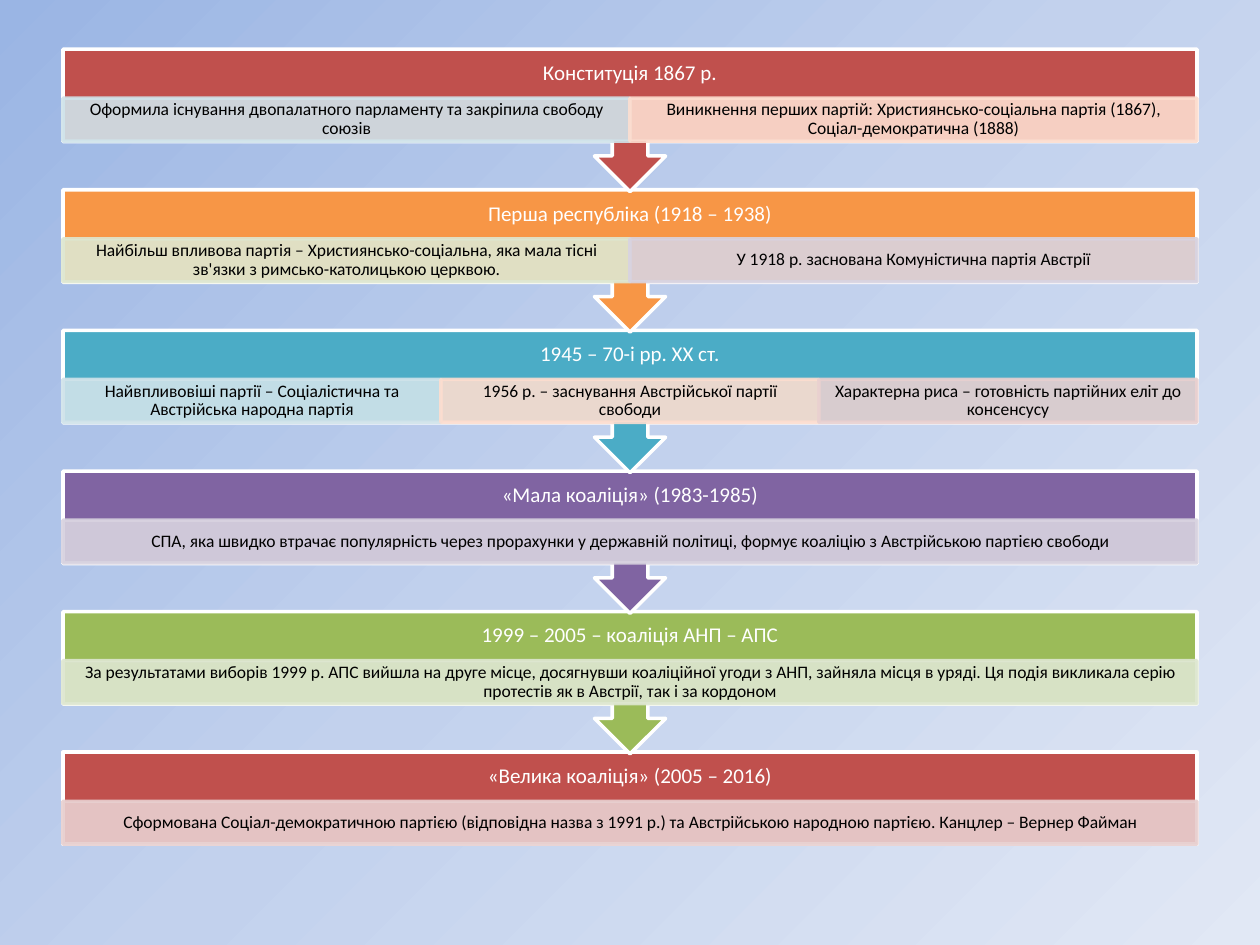
from copy import deepcopy

from pptx import Presentation
from pptx.dml.color import RGBColor
from pptx.enum.shapes import MSO_SHAPE
from pptx.enum.text import MSO_ANCHOR, PP_ALIGN
from pptx.oxml.ns import qn
from pptx.util import Inches, Pt

COLORS = {
    "white": "FFFFFF", "black": "000000",
    "red": "C0504D", "orange": "F79646", "teal": "4BACC6",
    "purple": "8064A2", "green": "9BBB59",
    "pale red": "E8D0D0", "pale orange": "FCDDCF", "pale teal": "D0E3EA",
    "pale purple": "D8D3E0", "pale green": "DEE7D1",
}
BACKGROUND = [(0, "9AB5E4"), (0.5, "C2D1ED"), (1, "E1E8F5")]

# Heading, colour, [(detail, colour), ...]
STAGES = [
    ("Конституція 1867 р.", "red", [
        ("Оформила існування двопалатного парламенту та закріпила свободу союзів", "pale teal"),
        ("Виникнення перших партій: Християнсько-соціальна партія (1867), "
         "Соціал-демократична (1888)", "pale orange"),
    ]),
    ("Перша республіка (1918 – 1938)", "orange", [
        ("Найбільш впливова партія – Християнсько-соціальна, яка мала тісні "
         "зв'язки з римсько-католицькою церквою.", "pale green"),
        ("У 1918 р. заснована Комуністична партія Австрії", "pale purple"),
    ]),
    ("1945 – 70-і рр. XX ст.", "teal", [
        ("Найвпливовіші партії – Соціалістична та Австрійська народна партія", "pale teal"),
        ("1956 р. – заснування Австрійської партії свободи", "pale orange"),
        ("Характерна риса – готовність партійних еліт до консенсусу", "pale red"),
    ]),
    ("«Мала коаліція» (1983-1985)", "purple", [
        ("СПА, яка швидко втрачає популярність через прорахунки у державній політиці, "
         "формує коаліцію з Австрійською партією свободи", "pale purple"),
    ]),
    ("1999 – 2005 – коаліція АНП – АПС", "green", [
        ("За результатами виборів 1999 р. АПС вийшла на друге місце, досягнувши коаліційної "
         "угоди з АНП, зайняла місця в уряді. Ця подія викликала серію протестів "
         "як в Австрії, так і за кордоном", "pale green"),
    ]),
    ("«Велика коаліція» (2005 – 2016)", "red", [
        ("Сформована Соціал-демократичною партією (відповідна назва з 1991 р.) та "
         "Австрійською народною партією. Канцлер – Вернер Файман", "pale red"),
    ]),
]

LEFT, WIDTH = 0.5, 9
TOP, LAST_TOP = 0.39, 5.97
PITCH = (LAST_TOP - TOP) / (len(STAGES) - 1)
CALLOUT_H, LAST_H = 1.13, 0.73
HEADING_H, DETAIL_H = 0.39, 0.34


def add_block(kind, left, top, width, height, fill, line):
    sp = s.shapes.add_shape(kind, Inches(left), Inches(top), Inches(width), Inches(height))
    sp.shadow.inherit = False
    sp.fill.solid()
    sp.fill.fore_color.rgb = RGBColor.from_string(COLORS[fill])
    sp.line.color.rgb = RGBColor.from_string(COLORS[line])
    sp.line.width = Pt(2)
    return sp


def write(sp, text, size, color, inset_x, inset_y):
    tf = sp.text_frame
    tf.word_wrap = True
    tf.vertical_anchor = MSO_ANCHOR.MIDDLE
    tf.margin_left = tf.margin_right = Inches(inset_x)
    tf.margin_top = tf.margin_bottom = Inches(inset_y)
    p = tf.paragraphs[0]
    p.alignment = PP_ALIGN.CENTER
    p.line_spacing = 0.9
    r = p.add_run()
    r.text = text
    r.font.name = "Calibri"
    r.font.size = Pt(size)
    r.font.color.rgb = RGBColor.from_string(COLORS[color])


prs = Presentation()
prs.slide_width, prs.slide_height = Inches(10), Inches(7.5)
s = prs.slides.add_slide(prs.slide_layouts[6])

# Diagonal three-colour background
fill = s.background.fill
fill.gradient()
fill.gradient_angle = 315
stop_list = s.element.find(".//" + qn("a:gsLst"))
stop_list.append(deepcopy(stop_list[0]))
for stop, (position, color) in zip(fill.gradient_stops, BACKGROUND):
    stop.position = position
    stop.color.rgb = RGBColor.from_string(color)

# Built from the bottom up, so that each arrow lies over the next stage
for i, (heading, color, details) in reversed(list(enumerate(STAGES))):
    top = TOP + i * PITCH
    if i == len(STAGES) - 1:
        add_block(MSO_SHAPE.RECTANGLE, LEFT, top, WIDTH, LAST_H, color, "white")
    else:
        callout = add_block(MSO_SHAPE.UP_ARROW_CALLOUT, LEFT, top, WIDTH, CALLOUT_H,
                            color, "white")
        callout.rotation = 180

    heading_box = s.shapes.add_textbox(Inches(LEFT), Inches(top), Inches(WIDTH),
                                       Inches(HEADING_H))
    write(heading_box, heading, 12, "white", 0.09, 0.09)

    detail_w = WIDTH / len(details)
    for j, (detail, pale) in enumerate(details):
        sp = add_block(MSO_SHAPE.RECTANGLE, LEFT + j * detail_w, top + HEADING_H,
                       detail_w, DETAIL_H, pale, pale)
        for clr in sp.element.spPr.iter(qn("a:srgbClr")):
            clr.makeelement(qn("a:alpha"))
            alpha = clr.makeelement(qn("a:alpha"), {"val": "90000"})
            clr.append(alpha)
        write(sp, detail, 10, "black", 0.08, 0.01)

prs.save("out.pptx")
